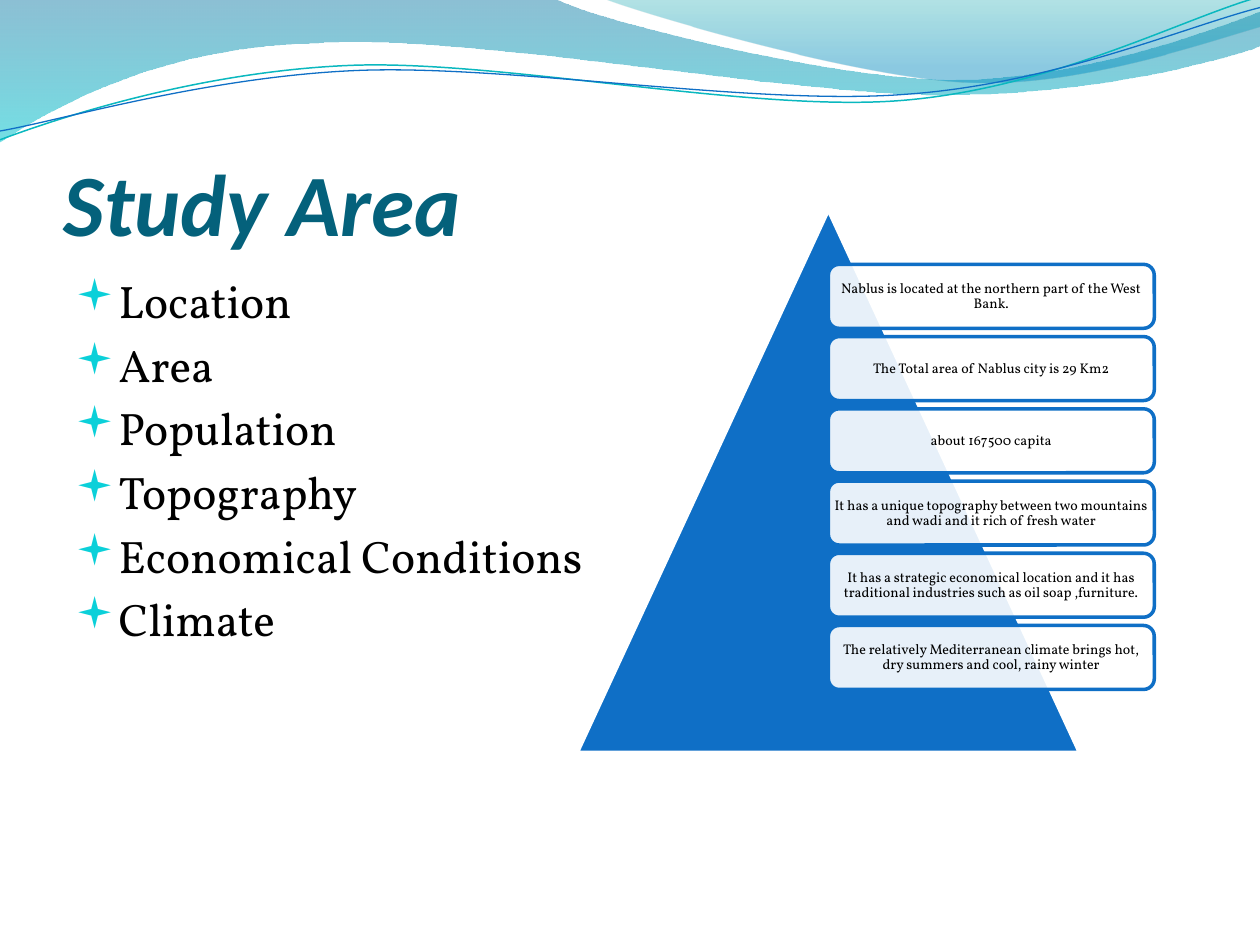
from pptx import Presentation
from pptx.dml.color import RGBColor
from pptx.enum.shapes import MSO_SHAPE as Kind
from pptx.enum.text import MSO_ANCHOR as Anchor, PP_ALIGN as Align
from pptx.oxml.ns import qn
from pptx.util import Cm, Pt
from lxml.etree import SubElement as sub

BLUE = "0F6FC6"
TOPICS = ["Location", "Area", "Population", "Topography",
          "Economical Conditions", "Climate"]
FACTS = [
    "Nablus is located at the northern part of the West Bank.",
    "The Total area of Nablus city is 29 Km2",
    "about 167500 capita",
    "It has a unique topography between two mountains and wadi and it rich of fresh water",
    "It has a strategic economical location and it has traditional industries such as oil soap ,furniture.",
    "The relatively Mediterranean climate brings hot, dry summers and cool, rainy winter",
]

# Waves, in tenths of the banner width: a start, then lines (one point)
# and curves (two handles and an end). Bands: outline, then gradient stops
# of place, colour and opacity.
BANDS = [
    ([[(0, 0)], [(4.4, -0.01)],
      [(4.76, 0.17), (6.64, 0.63), (7.58, 0.63)],
      [(8.53, 0.63), (9.58, 0.26), (10, 0.09)], [(10.01, 0.36)],
      [(9.83, 0.44), (8.7, 0.76), (7.46, 0.75)],
      [(6.22, 0.75), (3.82, 0.28), (2.57, 0.34)],
      [(1.29, 0.36), (0.46, 0.83), (-0.01, 1.13)], [(0, 0)]],
     [(0, "0074A1", 45), (1, "00C6CF", 55)]),
    ([[(4.79, -0.01)],
      [(5.09, 0.11), (6.82, 0.62), (7.69, 0.65)],
      [(8.56, 0.69), (9.61, 0.32), (10, 0.21)], [(10, 0)], [(4.79, -0.01)]],
     [(0, "00A1A9", 30), (0.8, "008BBF", 45)]),
]
STRANDS = [
    ([[(0, 1.11)],
      [(0.48, 0.93), (1.58, 0.57), (2.77, 0.52)],
      [(3.95, 0.47), (5.93, 0.89), (7.13, 0.8)],
      [(8.33, 0.71), (9.38, 0.15), (9.98, -0.02)]], "0AB8BF", 0.85),
    ([[(0, 1.04)],
      [(0.47, 0.96), (1.64, 0.61), (2.83, 0.56)],
      [(4.03, 0.51), (5.97, 0.84), (7.17, 0.75)],
      [(8.36, 0.67), (9.41, 0.21), (10, 0.06)]], BLUE, 0.75),
]


def color(code):
    return RGBColor.from_string(code)


def fade(node, share):
    """Set the opacity, in percent, of a colour below node."""
    sub(node.find(".//" + qn("a:srgbClr")), qn("a:alpha"), val=str(share * 1000))


def style(run, font, size, code):
    run.font.name, run.font.size = font, Pt(size)
    run.font.color.rgb = color(code)


def wave(slide, box, steps, close):
    """Draw an outline whose three-point steps are cubic curves."""
    left, top, width, _ = box
    unit = width / 10
    steps = [[(round(left + x * unit), round(top + y * unit)) for x, y in step]
             for step in steps]
    pen = slide.shapes.build_freeform(*steps[0][0])
    pen.add_line_segments([step[-1] for step in steps[1:]], close=close)
    shape = pen.convert_to_shape()
    shape.shadow.inherit = False
    # Bend the segments that have handles
    for node, step in zip(list(shape.element.iter(qn("a:lnTo"))), steps[1:]):
        if len(step) == 3:
            curve = node.makeelement(qn("a:cubicBezTo"))
            for x, y in step:
                sub(curve, qn("a:pt"), x=str(x - shape.left), y=str(y - shape.top))
            node.getparent().replace(node, curve)
    return shape


def add_banner(slide, box):
    # Tinted bands
    for steps, stops in BANDS:
        band = wave(slide, box, steps, True)
        band.line.fill.background()
        band.fill.gradient()
        band.fill.gradient_angle = 270
        nodes = band.element.iter(qn("a:gs"))
        for stop, node, (place, code, share) in zip(band.fill.gradient_stops, nodes, stops):
            stop.position = place
            stop.color.rgb = color(code)
            fade(node, share)
    # Thin strands
    for steps, code, width in STRANDS:
        strand = wave(slide, box, steps, False)
        strand.fill.background()
        strand.line.color.rgb = color(code)
        strand.line.width = Pt(width)


def add_title(slide, box, text):
    frame = slide.shapes.add_textbox(*box).text_frame
    frame.word_wrap = True
    frame.vertical_anchor = Anchor.BOTTOM
    frame.margin_left = frame.margin_right = frame.margin_bottom = 0
    frame.text = text
    run = frame.paragraphs[0].runs[0]
    style(run, "Calibri", 50, "04617B")
    run.font.bold = run.font.italic = True


def add_list(slide, box, items):
    frame = slide.shapes.add_textbox(*box).text_frame
    frame.word_wrap = True
    frame.text = "\n".join(items)
    for para in frame.paragraphs:
        para.space_before = Pt(5.2)
        style(para.runs[0], "Vollkorn", 26, "000000")
        # Square bullet with a hanging indent
        props = para._p.get_or_add_pPr()
        props.set("marL", str(Cm(0.76)))
        props.set("indent", str(-Cm(0.76)))
        tint = sub(props, qn("a:buClr"))
        sub(tint, qn("a:srgbClr"), val="0BD0D9")
        sub(props, qn("a:buSzPct"), val="95000")
        sub(props, qn("a:buFont"), typeface="Wingdings", charset="2")
        sub(props, qn("a:buChar"), char="▪")


def add_block(slide, kind, box, fill, line):
    shape = slide.shapes.add_shape(kind, *box)
    shape.shadow.inherit = False
    shape.fill.solid()
    shape.fill.fore_color.rgb = color(fill)
    shape.line.color.rgb = color(line)
    shape.line.width = Pt(2)
    return shape


def add_pyramid(slide, box, facts):
    left, top, width, _ = box
    add_block(slide, Kind.ISOSCELES_TRIANGLE, box, BLUE, "FFFFFF")
    # Cards start at the axis of the triangle
    pitch = Cm(7.28) // (len(facts) - 1)
    for i, fact in enumerate(facts):
        spot = (left + width // 2, top + Cm(1.09) + i * pitch, Cm(6.57), Cm(1.29))
        card = add_block(slide, Kind.ROUNDED_RECTANGLE, spot, "FFFFFF", BLUE)
        fade(card.element.spPr.find(qn("a:solidFill")), 90)
        frame = card.text_frame
        frame.word_wrap = True
        frame.vertical_anchor = Anchor.MIDDLE
        frame.margin_left = frame.margin_right = Cm(0.05)
        frame.margin_top = frame.margin_bottom = Cm(0.05)
        frame.text = fact
        para = frame.paragraphs[0]
        para.alignment = Align.CENTER
        para.line_spacing = 0.9
        style(para.runs[0], "Vollkorn", 8, "000000")


def main():
    deck = Presentation()
    deck.slide_width, deck.slide_height = Cm(25.4), Cm(19.05)
    slide = deck.slides.add_slide(deck.slide_layouts[6])
    add_banner(slide, (0, 0, deck.slide_width, Cm(2.87)))
    add_title(slide, (Cm(1.28), Cm(1.95), Cm(22.86), Cm(3.17)), "Study Area")
    add_list(slide, (Cm(1.27), Cm(5.38), Cm(22.86), Cm(12.19)), TOPICS)
    add_pyramid(slide, (Cm(11.64), Cm(4.24), Cm(10.12), Cm(10.93)), FACTS)
    deck.save("out.pptx")


if __name__ == "__main__":
    main()
